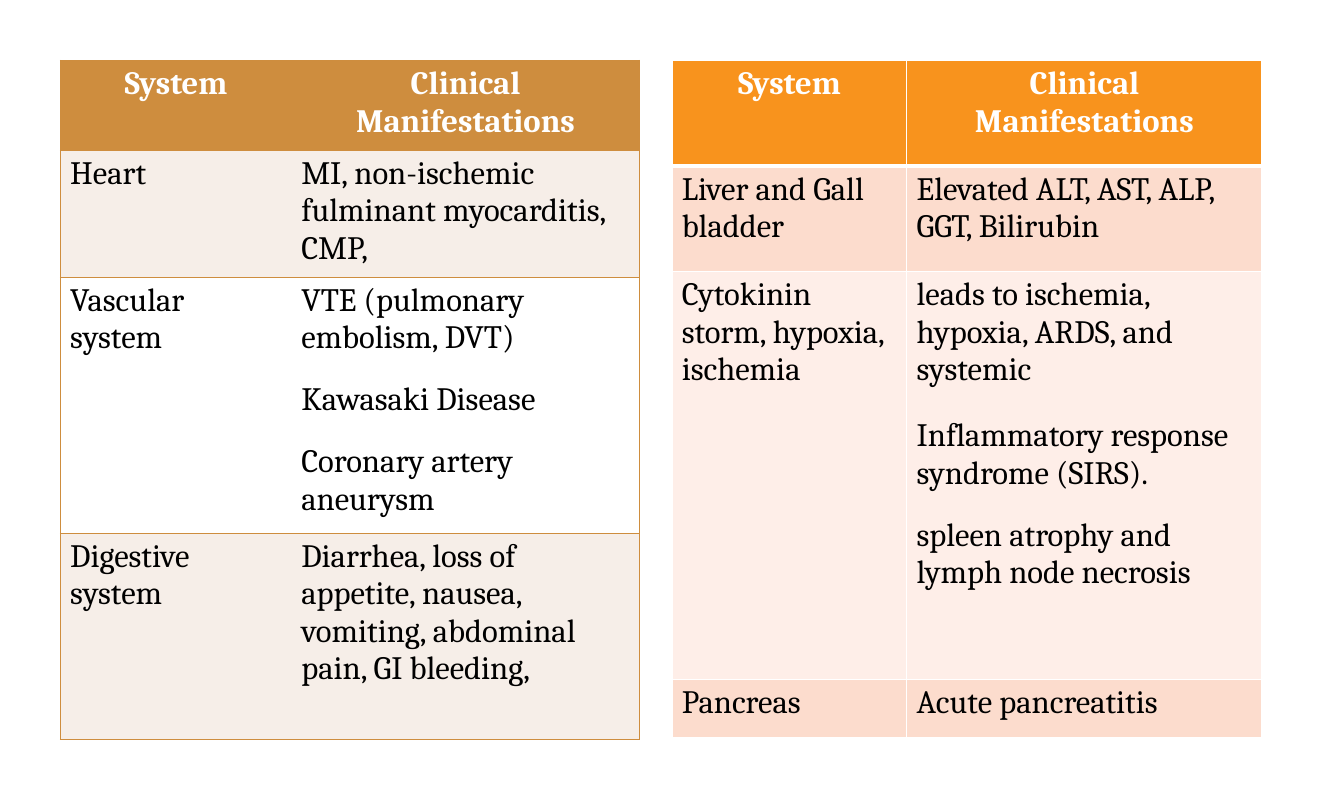
from pptx import Presentation
from pptx.dml.color import RGBColor
from pptx.enum import text
from pptx.oxml import parse_xml
from pptx.oxml.ns import nsdecls
from pptx.util import Cm, Pt

BLACK = RGBColor(0x00, 0x00, 0x00)
WHITE = RGBColor(0xFF, 0xFF, 0xFF)
BRONZE = RGBColor(0xCE, 0x8D, 0x3E)
BRONZE_TINT = RGBColor(0xF6, 0xEE, 0xE8)
ORANGE = RGBColor(0xF8, 0x93, 0x1D)
PEACH = RGBColor(0xFC, 0xDC, 0xCD)
PEACH_LIGHT = RGBColor(0xFE, 0xEE, 0xE8)

HEADER = ("System", ["Clinical Manifestations"])
SYSTEM_TABLES = [
    {
        "left": 1.57, "columns": [6, 9.04], "rows": [2.33, 3.3, 6.65, 5.35],
        "header": BRONZE, "bands": [BRONZE_TINT, WHITE],
        "border": BRONZE, "divider": False, "header_rule": 1, "gaps": [0, 18, 18],
        "content": [
            HEADER,
            ("Heart", ["MI, non-ischemic fulminant myocarditis, CMP,"]),
            ("Vascular system", ["VTE (pulmonary embolism, DVT)", "Kawasaki Disease",
                                 "Coronary artery aneurysm"]),
            ("Digestive system", ["Diarrhea, loss of appetite, nausea, vomiting, "
                                  "abdominal pain, GI bleeding,"]),
        ],
    },
    {
        "left": 17.45, "columns": [6.1, 9.22], "rows": [2.74, 2.74, 10.6, 1.52],
        "header": ORANGE, "bands": [PEACH, PEACH_LIGHT],
        "border": WHITE, "divider": True, "header_rule": 3, "gaps": [0, 21, 18],
        "content": [
            HEADER,
            ("Liver and Gall bladder", ["Elevated ALT, AST, ALP, GGT, Bilirubin"]),
            ("Cytokinin storm, hypoxia, ischemia",
             ["leads to ischemia, hypoxia, ARDS, and systemic",
              "Inflammatory response syndrome (SIRS).",
              "spleen atrophy and lymph node necrosis"]),
            ("Pancreas", ["Acute pancreatitis"]),
        ],
    },
]


def add_border(cell, side, color, width):
    fill = f'<a:solidFill><a:srgbClr val="{color}"/></a:solidFill>' if width else "<a:noFill/>"
    cell._tc.get_or_add_tcPr().append(parse_xml(
        f'<a:ln{side} {nsdecls("a")} w="{Pt(width)}">{fill}</a:ln{side}>'))


def write_cell(cell, lines, gaps, is_header):
    cell.text_frame.text = "\n".join(lines)
    for paragraph, gap in zip(cell.text_frame.paragraphs, gaps):
        paragraph.space_before = Pt(gap)
        paragraph.alignment = text.PP_ALIGN.CENTER if is_header else text.PP_ALIGN.LEFT
        font_format = {"name": "Cambria", "size": Pt(24), "bold": is_header}
        for name, value in font_format.items():
            setattr(paragraph.font, name, value)
        paragraph.font.color.rgb = WHITE if is_header else BLACK


presentation = Presentation()
presentation.slide_width = Cm(34.9)
presentation.slide_height = Cm(20.78)
slide = presentation.slides.add_slide(presentation.slide_layouts[6])

for design in SYSTEM_TABLES:
    frame = slide.shapes.add_table(
        len(design["rows"]), len(design["columns"]), Cm(design["left"]), Cm(1.57),
        Cm(sum(design["columns"])), Cm(sum(design["rows"])))
    table = frame.table
    table.horz_banding = False
    for column, width in zip(table.columns, design["columns"]):
        column.width = Cm(width)
    for row, height in zip(table.rows, design["rows"]):
        row.height = Cm(height)

    for row_index, (system, manifestations) in enumerate(design["content"]):
        is_header = row_index == 0
        for column_index, lines in enumerate([[system], manifestations]):
            cell = table.cell(row_index, column_index)
            inner = 1 if design["divider"] else 0
            widths = {
                "L": inner if column_index else 1,
                "R": 1 if column_index else inner,
                "T": design["header_rule"] if row_index == 1 else 1,
                "B": design["header_rule"] if is_header else 1,
            }
            for side, width in widths.items():
                add_border(cell, side, design["border"], width)
            cell.fill.solid()
            cell.fill.fore_color.rgb = (
                design["header"] if is_header else design["bands"][(row_index - 1) % 2])
            write_cell(cell, lines, design["gaps"], is_header)

presentation.save("out.pptx")
